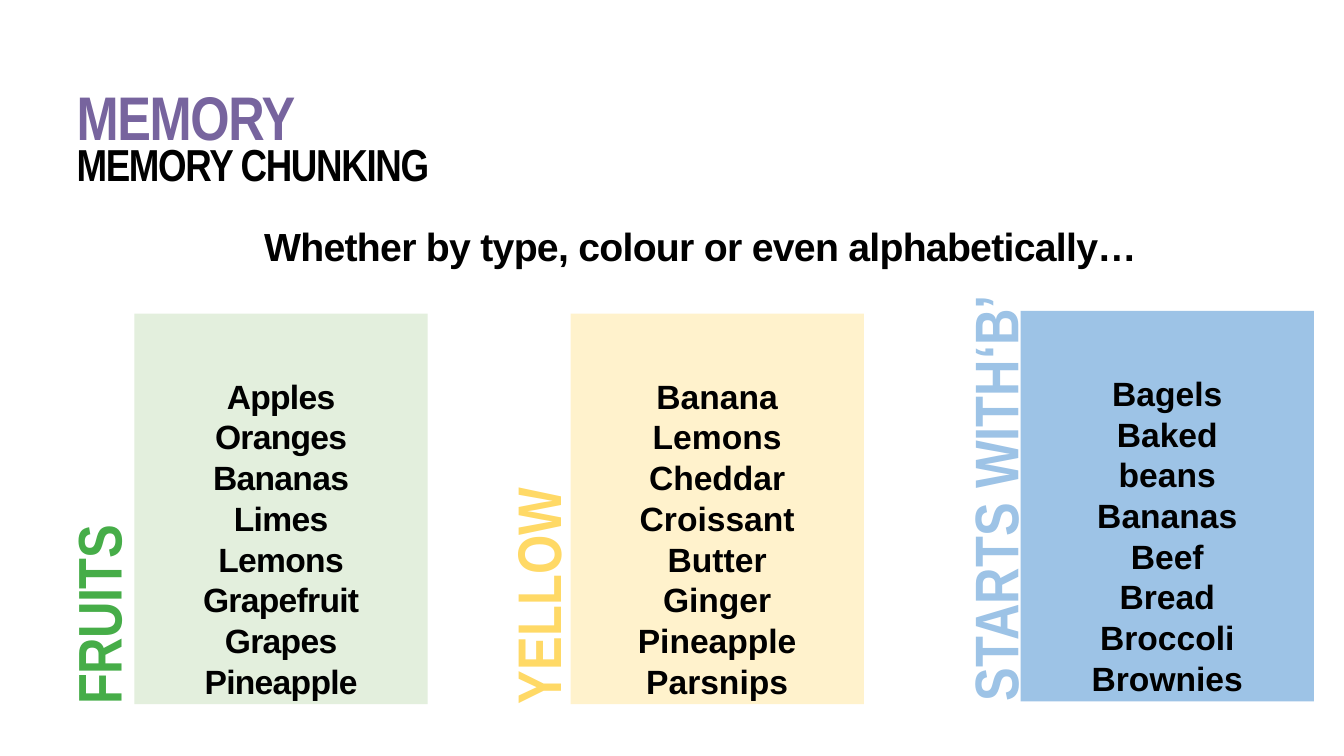
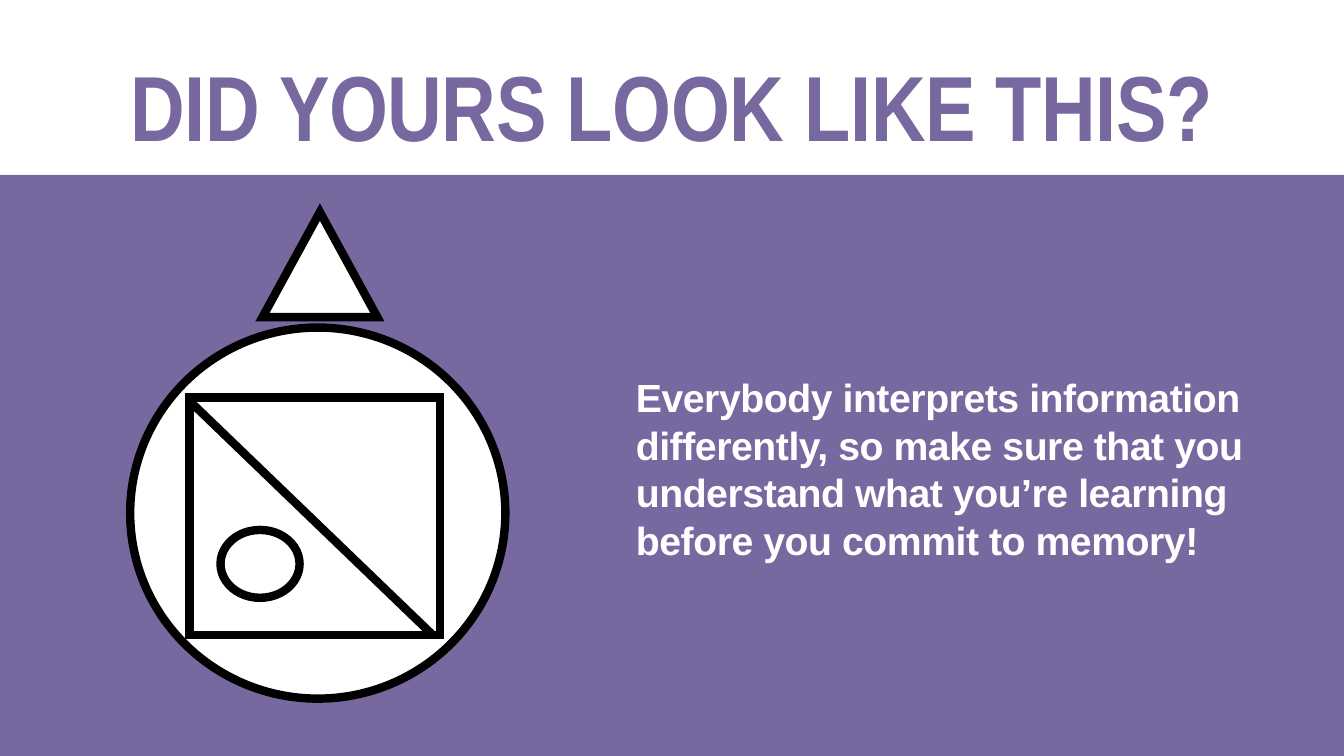
from dataclasses import dataclass

from lxml import etree
from pptx import Presentation
from pptx.dml.color import RGBColor
from pptx.enum.shapes import MSO_CONNECTOR, MSO_SHAPE
from pptx.enum.text import MSO_ANCHOR, MSO_AUTO_SIZE, PP_ALIGN
from pptx.oxml.ns import qn
from pptx.util import Pt

LEFT, CENTER = PP_ALIGN.LEFT, PP_ALIGN.CENTER
TOP = MSO_ANCHOR.TOP
NO_FIT = MSO_AUTO_SIZE.NONE
RECTANGLE, OVAL = MSO_SHAPE.RECTANGLE, MSO_SHAPE.OVAL
TRIANGLE = MSO_SHAPE.ISOSCELES_TRIANGLE
STRAIGHT = MSO_CONNECTOR.STRAIGHT


@dataclass(frozen=True)
class Theme:
    heading_font: str = "Arial Narrow"
    body_font: str = "Arial"
    heading: str = "77649E"
    band: str = "7769A0"
    black: str = "000000"
    white: str = "FFFFFF"
    banner_size: int = 66
    heading_size: int = 44
    subheading_size: int = 32
    statement_size: int = 28
    list_size: int = 24
    outline_width: int = 6


THEME = Theme()


def write(shape, lines, *, box, size, color=THEME.black, font=THEME.body_font,
          align=LEFT, line_spacing=1.01, tracking=0, insets=(0, 0, 0, 0)):
    """Place the shape and fill it with bold lines; lengths are in points."""
    shape.left, shape.top, shape.width, shape.height = map(Pt, box)
    frame = shape.text_frame
    frame.auto_size = NO_FIT
    frame.word_wrap = True
    frame.vertical_anchor = TOP
    (frame.margin_left, frame.margin_top,
     frame.margin_right, frame.margin_bottom) = map(Pt, insets)
    for index, line in enumerate(lines):
        paragraph = frame.add_paragraph() if index else frame.paragraphs[0]
        paragraph.alignment = align
        paragraph.line_spacing = line_spacing
        paragraph.space_before = Pt(0)
        run = paragraph.add_run()
        run.text = line
        run.font.name = font
        run.font.size = Pt(size)
        run.font.bold = True
        run.font.color.rgb = RGBColor.from_string(color)
    for properties in shape.element.iter(qn("a:pPr")):
        properties.set("marL", "0")
        properties.set("indent", "0")
        etree.SubElement(properties, qn("a:buNone"))
    for properties in shape.element.iter(qn("a:rPr")):
        properties.set("spc", str(round(tracking * 100)))


def draw_outline(shape):
    shape.line.color.rgb = RGBColor.from_string(THEME.black)
    shape.line.width = Pt(THEME.outline_width)
    line = shape.element.spPr.find(qn("a:ln"))
    etree.SubElement(line, qn("a:miter"), lim="800000")


presentation = Presentation()
presentation.slide_width, presentation.slide_height = Pt(960), Pt(540)
CONTENT_LAYOUT = presentation.slide_layouts[1]
COMPARISON_LAYOUT = presentation.slide_layouts[4]

# Memory chunking
slide = presentation.slides.add_slide(COMPARISON_LAYOUT)
title = slide.shapes.title
write(title, ["MEMORY", "MEMORY CHUNKING"], box=(47.5, 67.5, 268, 72),
      size=THEME.heading_size, color=THEME.heading, font=THEME.heading_font,
      line_spacing=0.7, tracking=-1, insets=(7.2, 3.6, 7.2, 3.6))
subheading = title.text_frame.paragraphs[1].runs[0].font
subheading.size = Pt(THEME.subheading_size)
subheading.color.rgb = RGBColor.from_string(THEME.black)

write(slide.placeholders[1], ["Whether by type, colour or even alphabetically…"],
      box=(188, 156, 750, 36), size=THEME.statement_size, line_spacing=1,
      tracking=-0.5, insets=(0.7, 2.8, 0, 0))

# label, label colour, label left, tracking, list fill, list left, list top, items
GROUPS = [
    ("FRUITS", "46AD48", 24, -0.5, "E3EFDD", 96, 224,
     ["Apples", "Oranges", "Bananas", "Limes", "Lemons", "Grapefruit",
      "Grapes", "Pineapple"]),
    ("YELLOW", "FFD966", 338, 0, "FFF2CC", 407.5, 224,
     ["Banana", "Lemons", "Cheddar", "Croissant", "Butter", "Ginger",
      "Pineapple", "Parsnips"]),
    ("STARTS WITH‘B’", "9DC3E6", 664.5, 0, "9DC3E6", 729, 222,
     ["Bagels", "Baked beans", "Bananas", "Beef", "Bread", "Broccoli",
      "Brownies"]),
]
LIST_WIDTH, LIST_HEIGHT = 209.5, 279
LABEL_WIDTH, LABEL_HEIGHT = 72, 297

for index, group in enumerate(GROUPS):
    name, color, label_left, tracking, fill, left, top, items = group
    item_list = slide.placeholders[index + 2]
    item_list.fill.solid()
    item_list.fill.fore_color.rgb = RGBColor.from_string(fill)
    write(item_list, items, box=(left, top, LIST_WIDTH, LIST_HEIGHT),
          size=THEME.list_size, align=CENTER, tracking=tracking,
          insets=(42, 44, 42, 0))

    label_top = top + LIST_HEIGHT - LABEL_HEIGHT
    label_box = (label_left, label_top, LABEL_WIDTH, LABEL_HEIGHT)
    label = slide.shapes.add_textbox(*map(Pt, label_box))
    label.element.find(".//" + qn("a:bodyPr")).set("vert", "vert270")
    write(label, [name], box=label_box, size=THEME.heading_size, color=color,
          font=THEME.heading_font, line_spacing=Pt(71.7), tracking=tracking)

# Did yours look like this?
slide = presentation.slides.add_slide(CONTENT_LAYOUT)
write(slide.shapes.title, ["DID YOURS LOOK LIKE THIS?"], box=(0, 33, 960, 90),
      size=THEME.banner_size, color=THEME.band, font=THEME.heading_font,
      align=CENTER, tracking=-0.3, insets=(0, 1.6, 0, 0))
write(slide.placeholders[1],
      ["Everybody interprets information differently, so make sure that you "
       "understand what you’re learning before you commit to memory!"],
      box=(453.5, 265, 473, 136), size=THEME.statement_size, color=THEME.white,
      tracking=-0.3, insets=(0.7, 1.6, 0, 0))

band = slide.shapes.add_shape(RECTANGLE, *map(Pt, (0, 125, 960, 415)))
band.shadow.inherit = False
band.fill.solid()
band.fill.fore_color.rgb = RGBColor.from_string(THEME.band)
band.line.fill.background()
slide.shapes.element.insert(2, band.element)  # behind the placeholders

FIGURES = [
    (OVAL, (93, 234, 268, 265), True),
    (RECTANGLE, (135.5, 284, 179, 169.5), False),
    (OVAL, (157.5, 378.5, 56.5, 48.5), False),
    (TRIANGLE, (187.5, 151.5, 82, 75), True),
]
for kind, box, filled in FIGURES:
    figure = slide.shapes.add_shape(kind, *map(Pt, box))
    figure.shadow.inherit = False
    if filled:
        figure.fill.solid()
        figure.fill.fore_color.rgb = RGBColor.from_string(THEME.white)
    else:
        figure.fill.background()
    draw_outline(figure)

diagonal = slide.shapes.add_connector(STRAIGHT, *map(Pt, (135.5, 286.5, 309, 453.5)))
draw_outline(diagonal)
etree.SubElement(diagonal.element.spPr, qn("a:effectLst"))

presentation.save("out.pptx")
